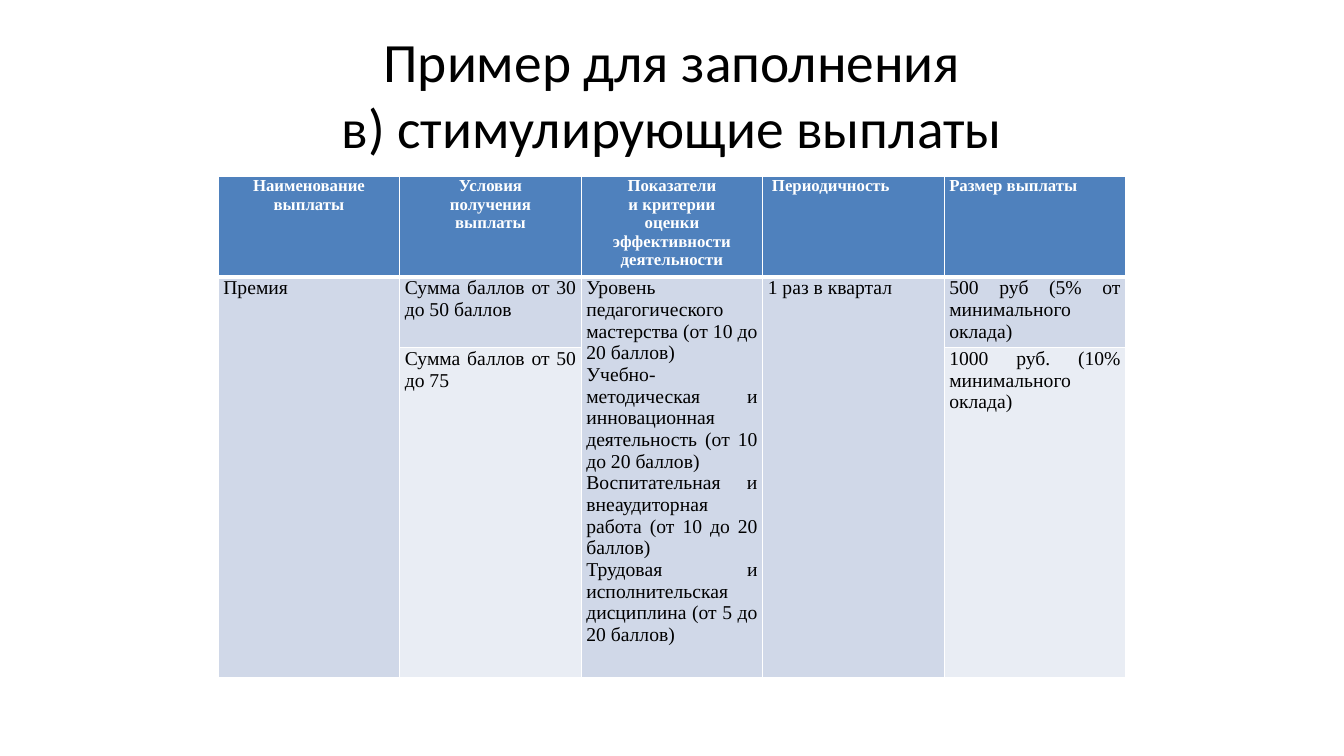
import pptx
import pptx.util
import pptx.dml.color
import pptx.enum.text
import pptx.oxml.ns
import lxml.etree

RGBColor = pptx.dml.color.RGBColor
Inches = pptx.util.Inches
Pt = pptx.util.Pt
ALIGN = pptx.enum.text.PP_ALIGN
ANCHOR = pptx.enum.text.MSO_ANCHOR
qn = pptx.oxml.ns.qn

BLACK = RGBColor(0x00, 0x00, 0x00)
WHITE = RGBColor(0xFF, 0xFF, 0xFF)
HEADER_BLUE = RGBColor(0x4F, 0x81, 0xBD)
BAND_DARK = RGBColor(0xD0, 0xD8, 0xE8)
BAND_LIGHT = RGBColor(0xE9, 0xED, 0xF4)

SLIDE_W, SLIDE_H = 13.33, 7.5
COL_W = 1.8
ROW_H = [0.92, 0.64, 3.02]
ROW_FILLS = [HEADER_BLUE, BAND_DARK, BAND_LIGHT]
MERGED_COLS = [0, 2, 3]

TITLE = "Пример для заполнения\nв) стимулирующие выплаты"
HEADERS = [
    "Наименование\nвыплаты",
    "Условия\nполучения\nвыплаты",
    "Показатели\nи критерии\nоценки\nэффективности\nдеятельности",
    " Периодичность",
    "Размер выплаты",
]
CRITERIA = [
    "Уровень педагогического мастерства (от 10 до 20 баллов)",
    "Учебно-методическая и инновационная деятельность (от 10 до 20 баллов)",
    "Воспитательная и внеаудиторная работа (от 10 до 20 баллов)",
    "Трудовая и исполнительская дисциплина (от 5 до 20 баллов)",
]
ROWS = [
    [[h] for h in HEADERS],
    [["Премия"], ["Сумма баллов от 30 до 50 баллов"], CRITERIA,
     ["1 раз в квартал"], ["500 руб (5% от минимального оклада)"]],
    [[], ["Сумма баллов от 50 до 75"], [], [],
     ["1000 руб. (10% минимального оклада)"]],
]


def add_text(tf, paragraphs, size, font, color, align, bold=False):
    for i, text in enumerate(paragraphs):
        p = tf.add_paragraph() if i else tf.paragraphs[0]
        p.alignment = align
        for j, line in enumerate(text.split("\n")):
            if j:
                p.add_line_break()
            r = p.add_run()
            r.text = line
            r.font.size = Pt(size)
            r.font.name = font
            r.font.bold = bold
            r.font.color.rgb = color


def add_title(s):
    tb = s.shapes.add_textbox(Inches(SLIDE_W * 0.05), Inches(SLIDE_H * 0.04),
                              Inches(SLIDE_W * 0.9), Inches(SLIDE_H / 6))
    tf = tb.text_frame
    tf.word_wrap = True
    tf.vertical_anchor = ANCHOR.MIDDLE
    add_text(tf, [TITLE], 39.6, "Calibri", BLACK, ALIGN.CENTER)


def set_borders(cell, top, bottom):
    tcPr = cell._tc.get_or_add_tcPr()
    for side, width in (("L", 1), ("R", 1), ("T", top), ("B", bottom)):
        ln = lxml.etree.SubElement(tcPr, qn("a:ln" + side), w=str(Pt(width)))
        fill = lxml.etree.SubElement(ln, qn("a:solidFill"))
        lxml.etree.SubElement(fill, qn("a:srgbClr"), val=str(WHITE))


def fill_cell(cell, row, col):
    header = row == 0
    cell.margin_left = cell.margin_right = Inches(0.05)
    cell.margin_top = cell.margin_bottom = 0
    set_borders(cell, 3 if row == 1 else 1, 3 if header else 1)
    cell.fill.solid()
    cell.fill.fore_color.rgb = ROW_FILLS[row]
    add_text(cell.text_frame, ROWS[row][col], 12 if header else 14,
             "Times New Roman", WHITE if header else BLACK,
             ALIGN.CENTER if header and col < 3 else ALIGN.JUSTIFY, header)


def add_payments_table(s):
    cols = len(HEADERS)
    width = COL_W * cols
    table = s.shapes.add_table(len(ROWS), cols,
                               Inches((SLIDE_W - width) / 2), Inches(1.75),
                               Inches(width), Inches(sum(ROW_H))).table
    for column in table.columns:
        column.width = Inches(COL_W)
    for row, height in enumerate(ROW_H):
        table.rows[row].height = Inches(height)
        for col in range(cols):
            fill_cell(table.cell(row, col), row, col)
    for col in MERGED_COLS:
        table.cell(1, col).merge(table.cell(2, col))


def main():
    prs = pptx.Presentation()
    prs.slide_width = Inches(SLIDE_W)
    prs.slide_height = Inches(SLIDE_H)
    s = prs.slides.add_slide(prs.slide_layouts[6])
    add_title(s)
    add_payments_table(s)
    prs.save("out.pptx")


if __name__ == "__main__":
    main()
